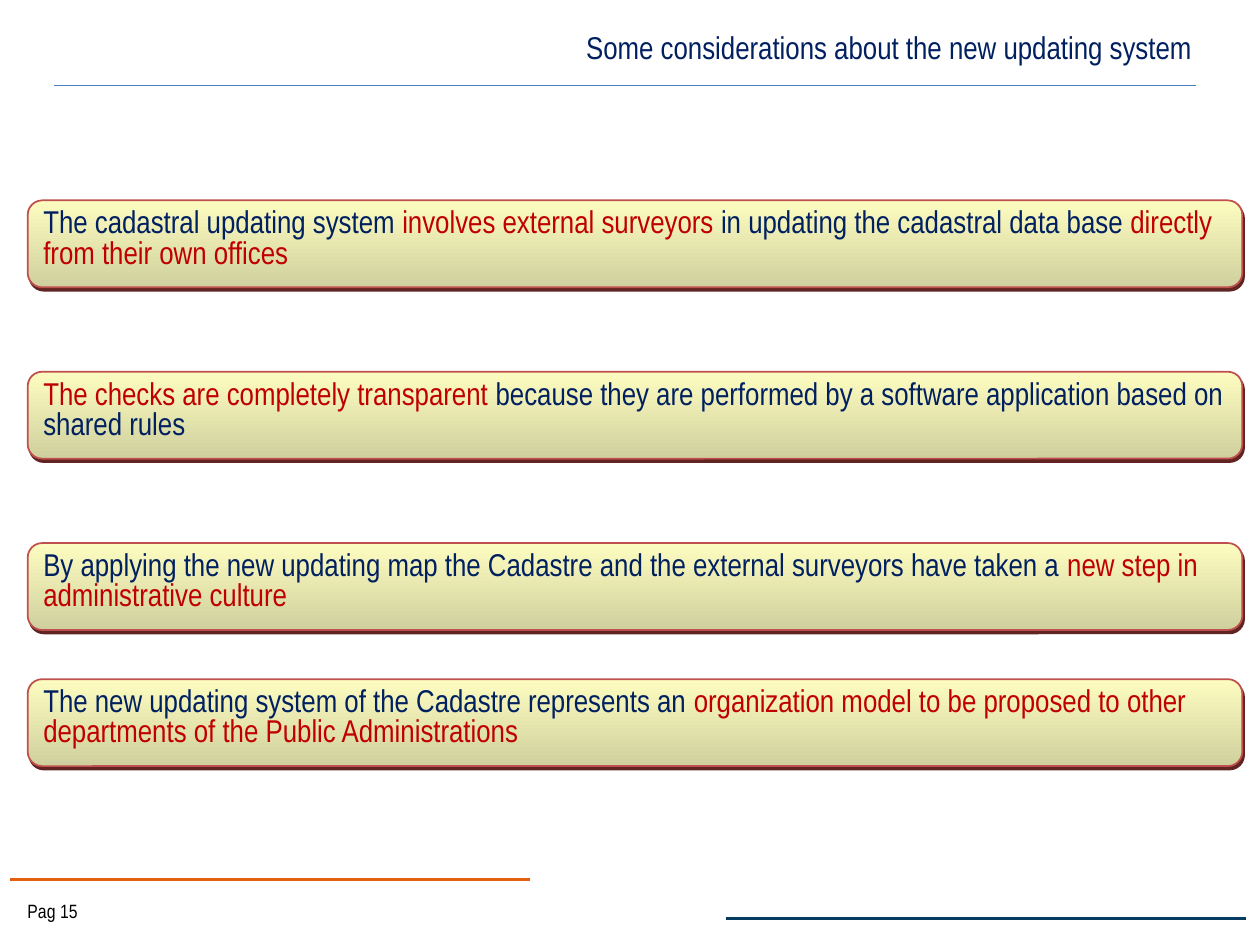
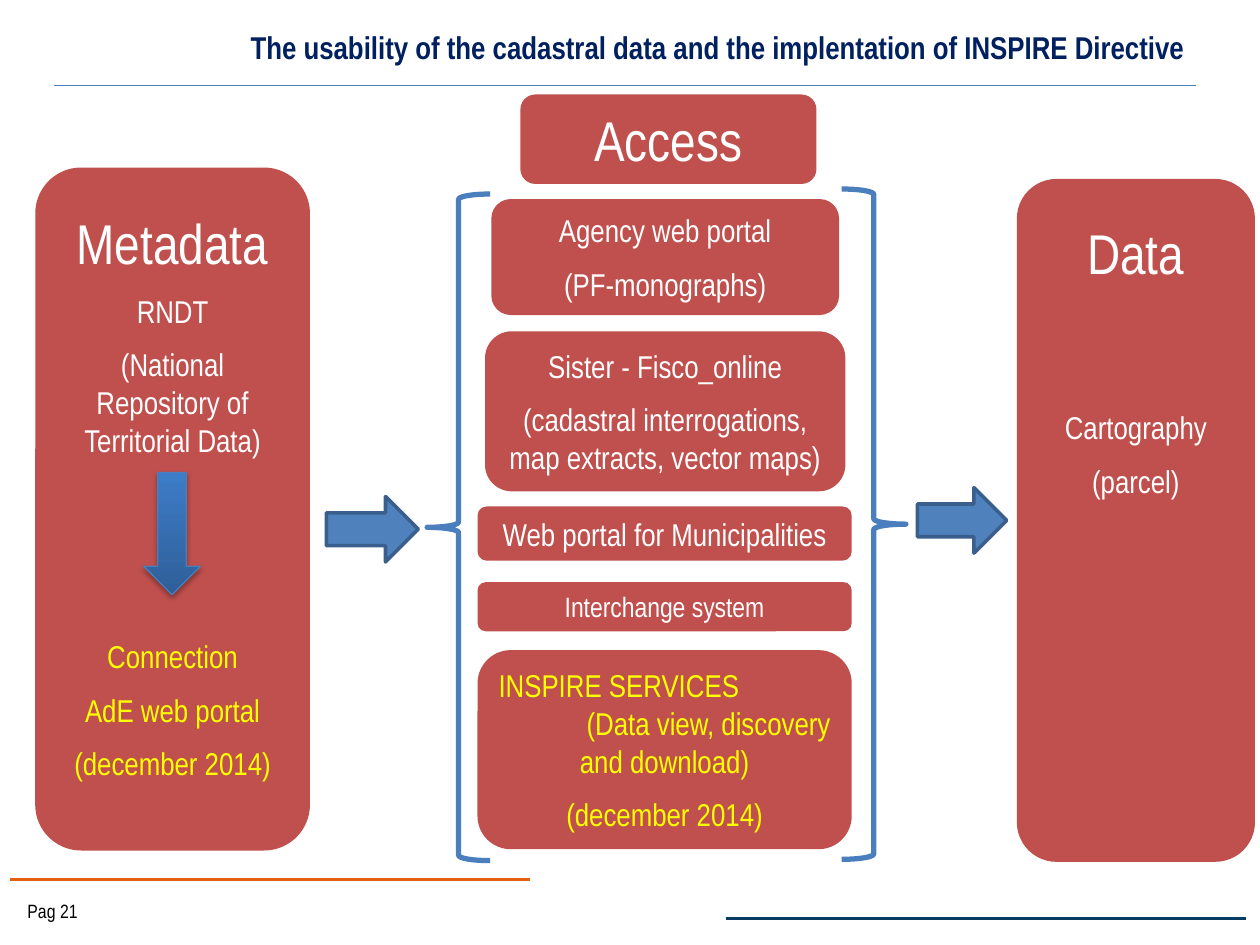
"""Build two slides on the new cadastral updating system and its data access."""
import pptx
import pptx.dml.color
import pptx.enum.shapes
import pptx.enum.text
import pptx.oxml
import pptx.oxml.ns
import pptx.util
from pptx.util import Inches, Pt

FONT = "Arial Narrow"
NAVY, RED, WHITE, YELLOW = "002060", "C00000", "FFFFFF", "FFFF00"
BRICK, BLUE, EDGE = "C0504D", "4F81BD", "4B7EBC"
KIND = pptx.enum.shapes.MSO_SHAPE
ALIGN = pptx.enum.text.PP_ALIGN
ANCHOR = pptx.enum.text.MSO_ANCHOR

RULES = [
    (0.43, 9.49, 0.68, EDGE, 0.75),
    (0.08, 4.21, 6.98, "E3600F", 2),
    (5.76, 9.89, 7.29, "073C62", 2),
]

POINTS = [
    (1.59, [("The cadastral updating system ", NAVY),
            ("involves external surveyors ", RED),
            ("in updating the cadastral data base ", NAVY),
            ("directly from their own offices", RED)]),
    (2.95, [("The checks are completely transparent ", RED),
            ("because they are performed by a software application "
             "based on shared rules", NAVY)]),
    (4.31, [("By applying the new updating map the Cadastre and the "
             "external surveyors have taken a ", NAVY),
            ("new step in administrative culture", RED)]),
    (5.39, [("The new updating system of the Cadastre represents an ", NAVY),
            ("organization model to be proposed to other departments of "
             "the Public Administrations", RED)]),
]

COLUMNS = [
    ((0.28, 1.33, 2.18, 5.42), [
        ("Metadata", 32, WHITE, 0),
        ("RNDT", 18, WHITE, 9),
        ("(National Repository of Territorial Data)", 18, WHITE, 9),
        ("Connection", 18, YELLOW, 102),
        ("AdE web portal", 18, YELLOW, 9),
        ("(december 2014)", 18, YELLOW, 9)]),
    ((8.07, 1.42, 1.89, 5.42), [
        ("Data", 32, WHITE, 0),
        ("Cartography", 18, WHITE, 70),
        ("(parcel)", 18, WHITE, 9)]),
]

PORTALS = [
    ((4.13, 0.75, 2.35, 0.71), [("Access", 32, WHITE, 0)]),
    ((3.9, 1.58, 2.76, 0.92), [
        ("Agency web portal", 18, WHITE, 0),
        ("(PF-monographs)", 18, WHITE, 9)]),
    ((3.85, 2.63, 2.86, 1.27), [
        ("Sister - Fisco_online", 18, WHITE, 0),
        ("(cadastral interrogations, map extracts, vector maps)",
         18, WHITE, 9)]),
    ((3.79, 4.02, 2.97, 0.43), [
        ("Web portal for Municipalities", 18, WHITE, 0)]),
    ((3.79, 4.62, 2.97, 0.39), [("Interchange system", 16, WHITE, 0)]),
    ((3.79, 5.16, 2.97, 1.58), [
        ("INSPIRE SERVICES", 18, YELLOW, 0, ALIGN.LEFT),
        ("(Data view, discovery", 18, YELLOW, 0, ALIGN.RIGHT),
        ("and download)", 18, YELLOW, 0),
        ("(december 2014)", 18, YELLOW, 9)]),
]

ARROWS = [(2.59, 3.94, 0.73, 0.52), (7.28, 3.87, 0.71, 0.52)]
BRACES = [
    (KIND.LEFT_BRACE, (3.39, 1.54, 0.5, 5.29)),
    (KIND.RIGHT_BRACE, (6.68, 1.5, 0.51, 5.32)),
]


def tint(code):
    return pptx.dml.color.RGBColor.from_string(code)


def place(box):
    return [Inches(n) for n in box]


def add_rule(slide, left, right, top, color, width):
    rule = slide.shapes.add_connector(
        pptx.enum.shapes.MSO_CONNECTOR.STRAIGHT,
        *place((left, top, right, top)))
    rule.line.color.rgb = tint(color)
    rule.line.width = Pt(width)
    props = rule._element.spPr
    props.append(pptx.oxml.parse_xml(
        f"<a:effectLst {pptx.oxml.ns.nsdecls('a')}/>"))


def add_form(slide, kind, box, fill=None, line=None, width=1):
    form = slide.shapes.add_shape(kind, *place(box))
    form.shadow.inherit = False
    if isinstance(fill, tuple):
        form.fill.gradient()
        form.fill.gradient_angle = 270
        for stop, color in zip(form.fill.gradient_stops, fill):
            stop.color.rgb = tint(color)
        form.fill.gradient_stops[0].position = 0
        form.fill.gradient_stops[1].position = 1
    elif fill:
        form.fill.solid()
        form.fill.fore_color.rgb = tint(fill)
    else:
        form.fill.background()
    if line:
        form.line.color.rgb = tint(line)
        form.line.width = Pt(width)
    else:
        form.line.fill.background()
    return form


def cast_shade(form, color, alpha, blur, dist, angle):
    effects = form._element.spPr.find(pptx.oxml.ns.qn("a:effectLst"))
    effects.append(pptx.oxml.parse_xml(
        f'<a:outerShdw {pptx.oxml.ns.nsdecls("a")} blurRad="{Pt(blur)}" '
        f'dist="{Pt(dist)}" dir="{angle * 60000}" algn="ctr" '
        f'rotWithShape="0"><a:srgbClr val="{color}">'
        f'<a:alpha val="{alpha * 1000}"/></a:srgbClr></a:outerShdw>'))


def set_frame(form, anchor, side=0.09, top=0.04):
    frame = form.text_frame
    frame.word_wrap = True
    frame.vertical_anchor = anchor
    frame.margin_left = frame.margin_right = Inches(side)
    frame.margin_top = Inches(top)
    frame.margin_bottom = Inches(0.04)
    return frame


def style(para, size, color=None, align=ALIGN.LEFT, bold=False):
    para.alignment = align
    para.font.name = FONT
    para.font.size = Pt(size)
    para.font.bold = bold
    if color:
        para.font.color.rgb = tint(color)


def add_label(slide, box, text, anchor, *look):
    label = slide.shapes.add_textbox(*place(box))
    frame = set_frame(label, anchor, 0.1, 0.05)
    frame.text = text
    style(frame.paragraphs[0], *look)


def add_card(slide, box, lines, anchor=ANCHOR.MIDDLE, top=0.04):
    card = add_form(slide, KIND.ROUNDED_RECTANGLE, box, BRICK)
    frame = set_frame(card, anchor, top=top)
    for index, (text, size, color, gap, *align) in enumerate(lines):
        para = frame.add_paragraph() if index else frame.paragraphs[0]
        para.text = text
        style(para, size, color, *(align or [ALIGN.CENTER]))
        if gap:
            para.space_before = Pt(gap)


def start_slide(deck, title, page, bold=False):
    slide = deck.slides.add_slide(deck.slide_layouts[6])
    for rule in RULES:
        add_rule(slide, *rule)
    add_label(slide, (0.12, 7.09, 1.17, 0.28), f"Pag {page}",
              ANCHOR.TOP, 11, "000000")
    add_label(slide, (1.06, 0.13, 8.5, 0.47), title,
              ANCHOR.MIDDLE, 18, NAVY, ALIGN.RIGHT, bold)
    return slide


def build_points(deck):
    slide = start_slide(
        deck, "Some considerations about the new updating system", 15)
    for top, parts in POINTS:
        bar = add_form(slide, KIND.ROUNDED_RECTANGLE, (0.22, top, 9.64, 0.69),
                       ("FDFCC0", "D0D09E"), BRICK)
        cast_shade(bar, "622423", 100, 0, 2.2, 63)
        para = set_frame(bar, ANCHOR.TOP).paragraphs[0]
        style(para, 18)
        para.line_spacing = 0.8
        for text, color in parts:
            run = para.add_run()
            run.text = text
            run.font.color.rgb = tint(color)


def build_access(deck):
    slide = start_slide(
        deck, "The usability of the cadastral data and the implentation "
        "of INSPIRE Directive ", 21, True)
    for box, lines in COLUMNS:
        add_card(slide, box, lines, ANCHOR.TOP, 0.22)
    for box, lines in PORTALS:
        add_card(slide, box, lines)
    for box in ARROWS:
        add_form(slide, KIND.RIGHT_ARROW, box, BLUE, "3A5F8C", 2)
    for kind, box in BRACES:
        add_form(slide, kind, box, None, EDGE, 3)
    arrow = add_form(slide, KIND.DOWN_ARROW, (1.14, 3.75, 0.45, 0.97),
                     ("3D7CC7", "2F5F99"), EDGE, 0.75)
    cast_shade(arrow, "000000", 35, 3.1, 1.8, 90)


def main():
    deck = pptx.Presentation()
    deck.slide_width, deck.slide_height = Inches(10), Inches(7.5)
    build_points(deck)
    build_access(deck)
    deck.save("out.pptx")


if __name__ == "__main__":
    main()
